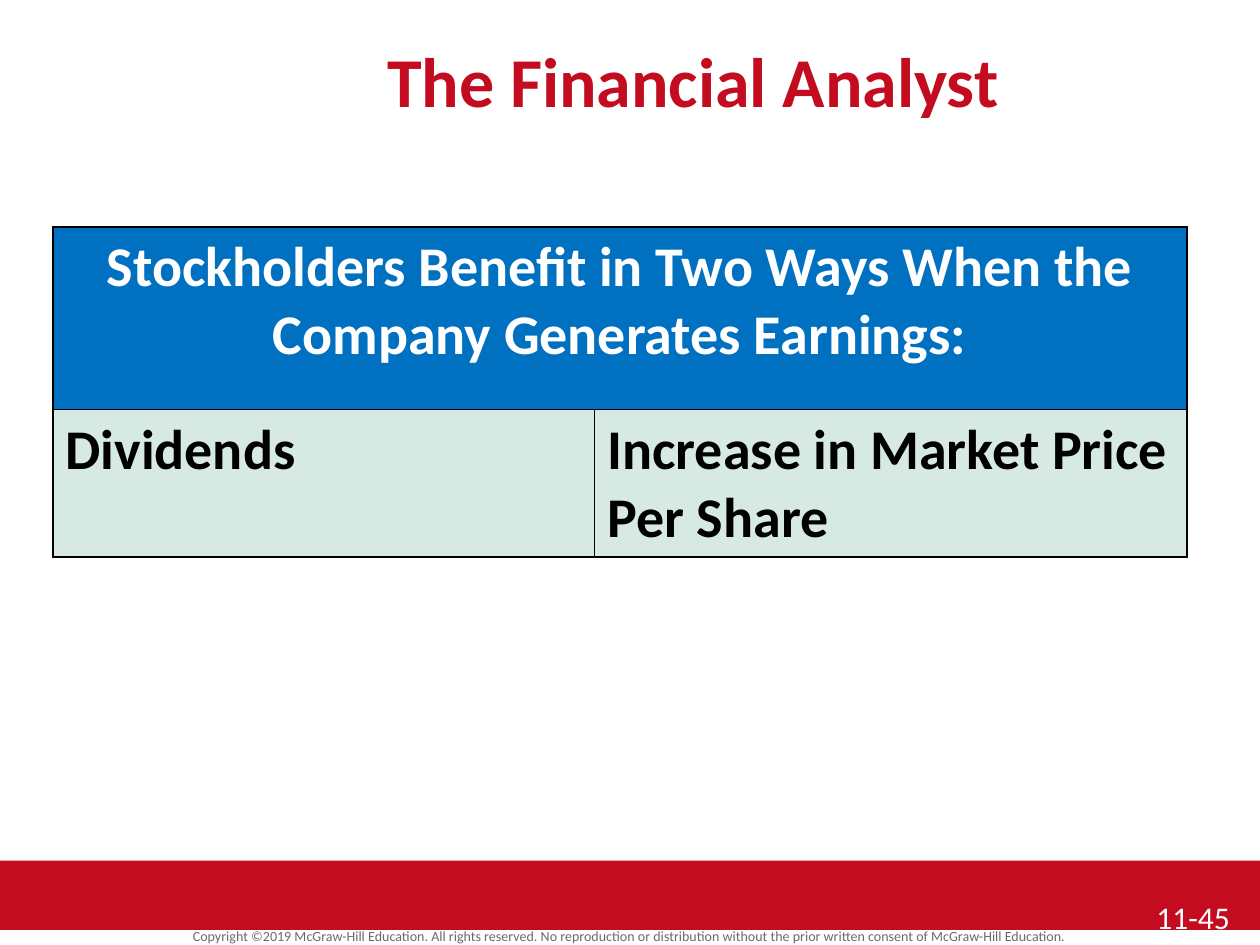
from dataclasses import dataclass

from lxml.etree import SubElement
from pptx import Presentation
from pptx.dml.color import RGBColor as RGB
from pptx.enum.shapes import MSO_SHAPE as Shape
from pptx.enum.text import MSO_ANCHOR as Anchor, PP_ALIGN as Align
from pptx.oxml.ns import qn
from pptx.util import Inches, Pt


@dataclass(frozen=True)
class Theme:
    font: str = "Calibri"
    red: str = "C30C20"
    blue: str = "0070C0"
    mint: str = "D7E9E3"
    white: str = "FFFFFF"
    black: str = "000000"
    gray: str = "6A6A6A"
    title_size: int = 40
    table_size: int = 32
    number_size: int = 18
    copyright_size: int = 8


class Deck:
    def __init__(self, theme):
        self.theme = theme
        self.prs = Presentation()
        self.prs.slide_width, self.prs.slide_height = Inches(10), Inches(7.5)
        self.slide = self.prs.slides.add_slide(self.prs.slide_layouts[6])

    def add_words(self, frame, words, size, color, bold=False, align=Align.LEFT):
        paragraph = frame.paragraphs[0]
        paragraph.alignment = align
        run = paragraph.add_run()
        run.text = words
        run.font.name, run.font.size, run.font.bold = self.theme.font, Pt(size), bold
        run.font.color.rgb = RGB.from_string(color)
        return paragraph

    def band(self, box, color):
        band = self.slide.shapes.add_shape(Shape.RECTANGLE, *map(Inches, box))
        band.shadow.inherit = False
        band.fill.solid()
        band.fill.fore_color.rgb = RGB.from_string(color)
        band.line.fill.background()

    def text(self, box, words, size, color, **style):
        frame = self.slide.shapes.add_textbox(*map(Inches, box)).text_frame
        frame.word_wrap = True
        frame.vertical_anchor = Anchor.TOP
        return self.add_words(frame, words, size, color, **style)

    def border(self, cell):
        props = cell._tc.get_or_add_tcPr()
        for position, side in enumerate(("lnL", "lnR", "lnT", "lnB")):
            line = props.makeelement(qn(f"a:{side}"), {"w": str(Pt(1))})
            fill = SubElement(line, qn("a:solidFill"))
            SubElement(fill, qn("a:srgbClr"), val=self.theme.black)
            props.insert(position, line)

    def table(self, left, top, widths, heights, heading, entries):
        theme = self.theme
        box = map(Inches, (left, top, sum(widths), sum(heights)))
        table = self.slide.shapes.add_table(len(heights), len(widths), *box).table
        for column, width in zip(table.columns, widths):
            column.width = Inches(width)
        for row, height in zip(table.rows, heights):
            row.height = Inches(height)
        table.cell(0, 0).merge(table.cell(0, len(widths) - 1))

        for row, fill in zip(table.rows, (theme.blue, theme.mint)):
            for cell in row.cells:
                cell.fill.solid()
                cell.fill.fore_color.rgb = RGB.from_string(fill)
                self.border(cell)

        self.add_words(table.cell(0, 0).text_frame, heading, theme.table_size,
                       theme.white, bold=True, align=Align.CENTER)
        for column, entry in enumerate(entries):
            self.add_words(table.cell(1, column).text_frame, entry,
                           theme.table_size, theme.black, bold=True)


def main():
    theme = Theme()
    deck = Deck(theme)

    # Footer band and copyright line
    deck.band((0, 6.83, 10, 0.55), theme.red)
    copyright_line = deck.text(
        (0, 7.34, 10, 0.16),
        "Copyright ©2019 McGraw-Hill Education. All rights reserved. No reproduction "
        "or distribution without the prior written consent of McGraw-Hill Education.",
        theme.copyright_size, theme.gray, align=Align.CENTER)
    copyright_line.line_spacing = 0.8

    # Title
    deck.text((1, 0.25, 9, 0.67), "The Financial Analyst",
              theme.title_size, theme.red, bold=True, align=Align.CENTER)

    # Slide number
    deck.text((9.08, 7.08, 0.92, 0.42), "11-45", theme.number_size, theme.white)

    # Stockholder benefits
    deck.table(0.42, 1.8, (4.3, 4.7), (1.45, 1.17),
               "Stockholders Benefit in Two Ways When the Company Generates Earnings:",
               ("Dividends", "Increase in Market Price Per Share"))

    deck.prs.save("out.pptx")


if __name__ == "__main__":
    main()
